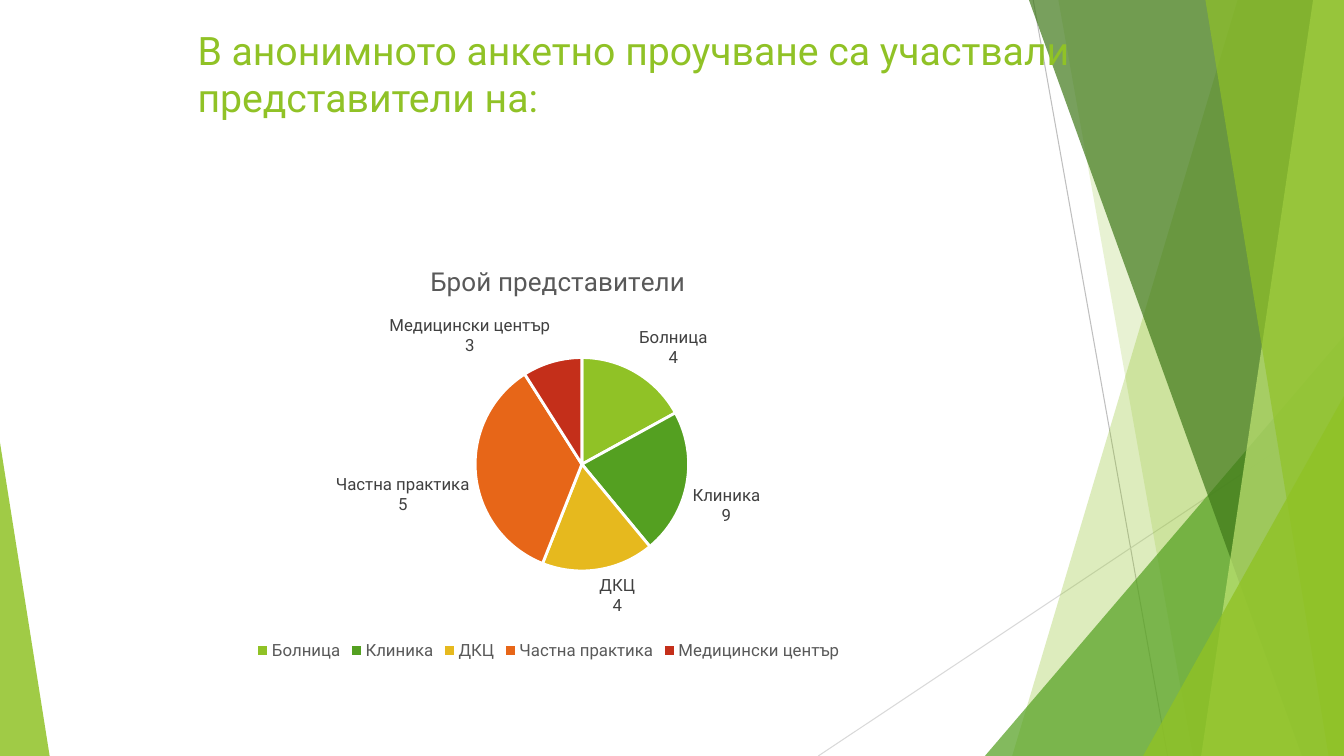
from lxml.etree import SubElement
from pptx import Presentation
from pptx.chart.data import CategoryChartData
from pptx.dml.color import RGBColor
from pptx.enum.chart import XL_CHART_TYPE, XL_LABEL_POSITION, XL_LEGEND_POSITION
from pptx.enum.shapes import MSO_CONNECTOR, MSO_SHAPE
from pptx.enum.text import MSO_ANCHOR
from pptx.oxml import parse_xml
from pptx.oxml.ns import nsdecls, qn
from pptx.util import Pt

FONT = "Roboto"
COLORS = {
    "lime": "90C226", "green": "54A021", "forest": "3F7819", "pale": "C0E474",
    "gold": "E6B91E", "orange": "E76618", "red": "C42F1A", "white": "FFFFFF",
    "gray": "BFBFBF", "light": "D9D9D9", "dark": "404040", "mid": "595959",
}


def rgb(name):
    return RGBColor.from_string(COLORS[name])


def write(frame, text, size=12, color="dark"):
    frame.text = text
    for par in frame.paragraphs:
        for run in par.runs:
            run.font.name = FONT
            run.font.size = Pt(size)
            run.font.bold = False
            run.font.color.rgb = rgb(color)


deck = Presentation()
deck.slide_width, deck.slide_height = Pt(960), Pt(540)
slide = deck.slides.add_slide(deck.slide_layouts[6])
shapes = slide.shapes

# Thin lines behind the facets
for x1, y1, x2, y2, color in [(738, 0, 834, 540, "gray"), (960, 290, 584.5, 540, "light")]:
    line = shapes.add_connector(MSO_CONNECTOR.STRAIGHT, Pt(x1), Pt(y1), Pt(x2), Pt(y2))
    line.line.color.rgb = rgb(color)
    line.line.width = Pt(0.75)
    SubElement(line._element.spPr, qn("a:effectLst"))

# Bands: top x, bottom x. Wedges: left, top, width, peak.
facets = [
    ("band", (884, 723), "lime", 30),
    ("band", (756, 852), "lime", 20),
    ("wedge", (703.5, 240, 256.5, 1), "green", 72),
    ("band", (735, 929.5), "forest", 70),
    ("band", (938, 858), "pale", 70),
    ("band", (861, 949), "lime", 65),
    ("wedge", (816.5, 283, 143.5, 1), "lime", 80),
    ("wedge", (0, 316, 35.5, 0), "lime", 85),
]
for kind, spot, color, alpha in facets:
    if kind == "band":
        top, base = spot
        pen = shapes.build_freeform(top, 0, scale=Pt(1))
        pen.add_line_segments([(960, 0), (960, 540), (base, 540)], close=True)
        facet = pen.convert_to_shape()
    else:
        left, top, width, peak = spot
        facet = shapes.add_shape(MSO_SHAPE.ISOSCELES_TRIANGLE,
                                 Pt(left), Pt(top), Pt(width), Pt(540 - top))
        facet.adjustments[0] = peak
    facet.shadow.inherit = False
    facet.line.fill.background()
    facet.fill.solid()
    facet.fill.fore_color.rgb = rgb(color)
    tint = facet._element.spPr.find(".//" + qn("a:srgbClr"))
    SubElement(tint, qn("a:alpha"), val=str(alpha * 1000))

title = shapes.add_textbox(Pt(134), Pt(15), Pt(760), Pt(63.5)).text_frame
title.word_wrap = True
title.vertical_anchor = MSO_ANCHOR.TOP
write(title, "В анонимното анкетно проучване са участвали представители на:",
      size=28, color="lime")

# Name, share, count in the label, colour
groups = [
    ("Болница", 17, 4, "lime"),
    ("Клиника", 22, 9, "green"),
    ("ДКЦ", 17, 4, "gold"),
    ("Частна практика", 35, 5, "orange"),
    ("Медицински център", 9, 3, "red"),
]
data = CategoryChartData()
data.categories = [group[0] for group in groups]
data.add_series("Series 1", [group[1] for group in groups])
chart = shapes.add_chart(XL_CHART_TYPE.PIE, Pt(53.5), Pt(170), Pt(677), Pt(305), data).chart
chart.font.name = FONT
chart.font.size = Pt(10)
chart.has_title = True
write(chart.chart_title.text_frame, "Брой представители", size=18.6, color="mid")

chart.has_legend = True
legend = chart.legend
legend.position = XL_LEGEND_POSITION.BOTTOM
legend.include_in_layout = False
legend.font.name = FONT
legend.font.size = Pt(12)
legend.font.color.rgb = rgb("mid")

plot = chart.plots[0]
plot.vary_by_categories = True
for index, (name, share, count, color) in enumerate(groups):
    slice_ = plot.series[0].points[index]
    slice_.format.fill.solid()
    slice_.format.fill.fore_color.rgb = rgb(color)
    slice_.format.line.color.rgb = rgb("white")
    slice_.format.line.width = Pt(2)
    write(slice_.data_label.text_frame, f"{name}\n{count}")
    slice_.data_label.position = XL_LABEL_POSITION.OUTSIDE_END

# Fixed places for the chart title and the pie, as parts of the chart frame
area = chart._chartSpace.chart
spots = [
    (area.find(qn("c:title")), 1, {"xMode": "edge", "yMode": "edge", "x": 0.37, "y": 0.05}),
    (area.plotArea, 0, {"layoutTarget": "inner", "xMode": "edge", "yMode": "edge",
                        "x": 0.42, "y": 0.28, "w": 0.23, "h": 0.5}),
]
for part, order, spot in spots:
    for old in part.findall(qn("c:layout")):
        part.remove(old)
    layout = parse_xml(f"<c:layout {nsdecls('c')}><c:manualLayout/></c:layout>")
    for key, value in spot.items():
        SubElement(layout[0], qn("c:" + key), val=str(value))
    part.insert(order, layout)

deck.save("out.pptx")
